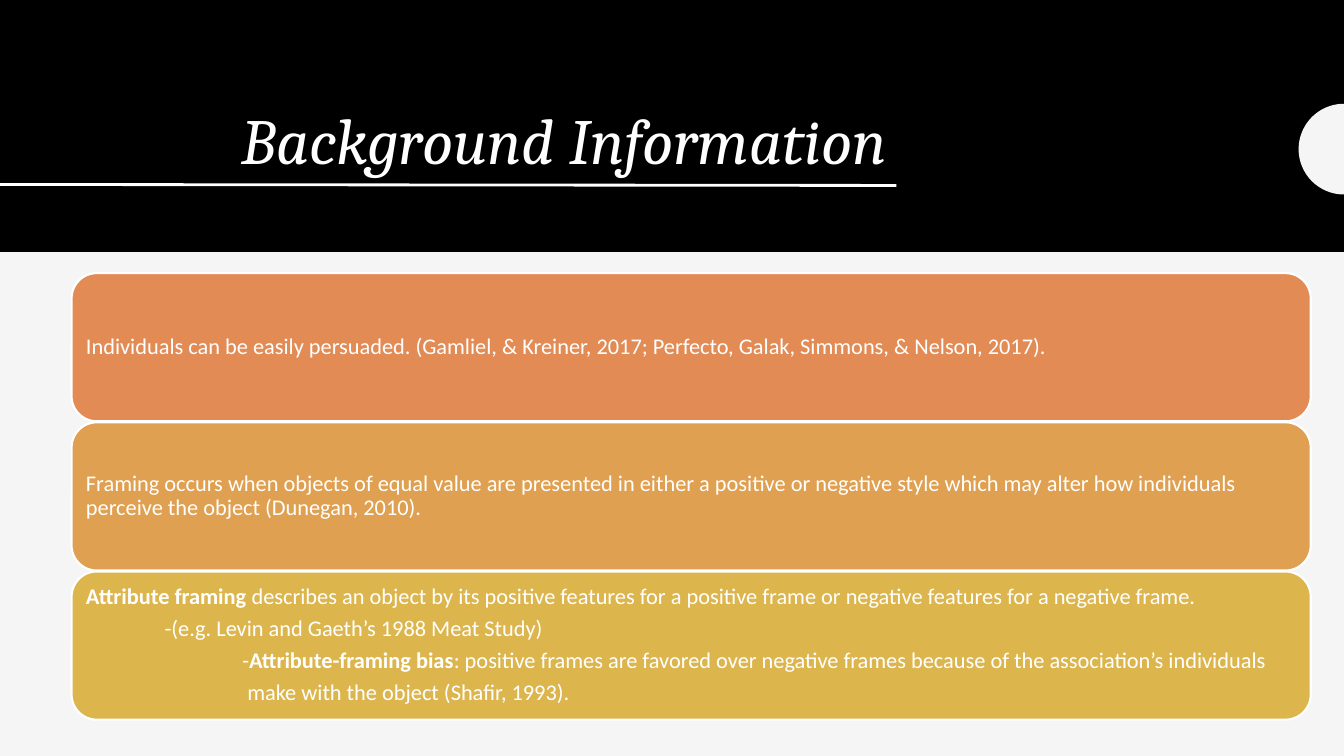
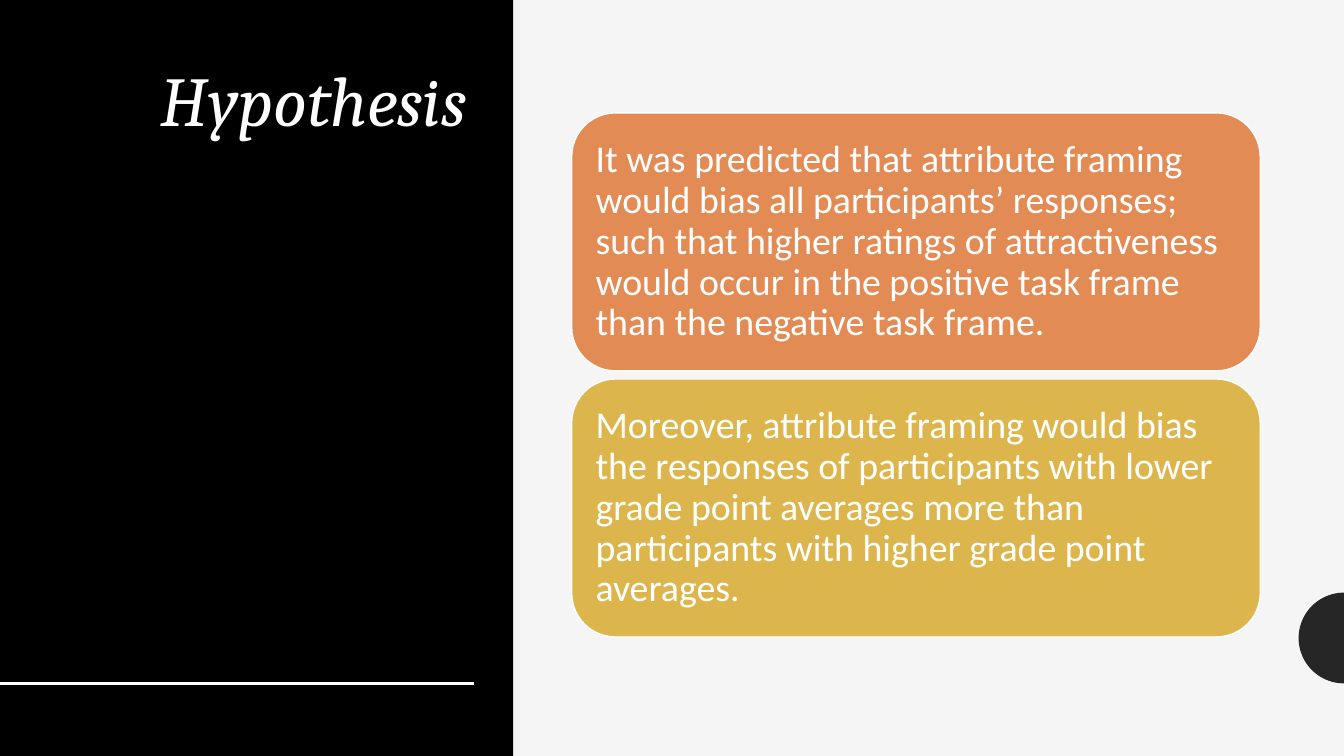
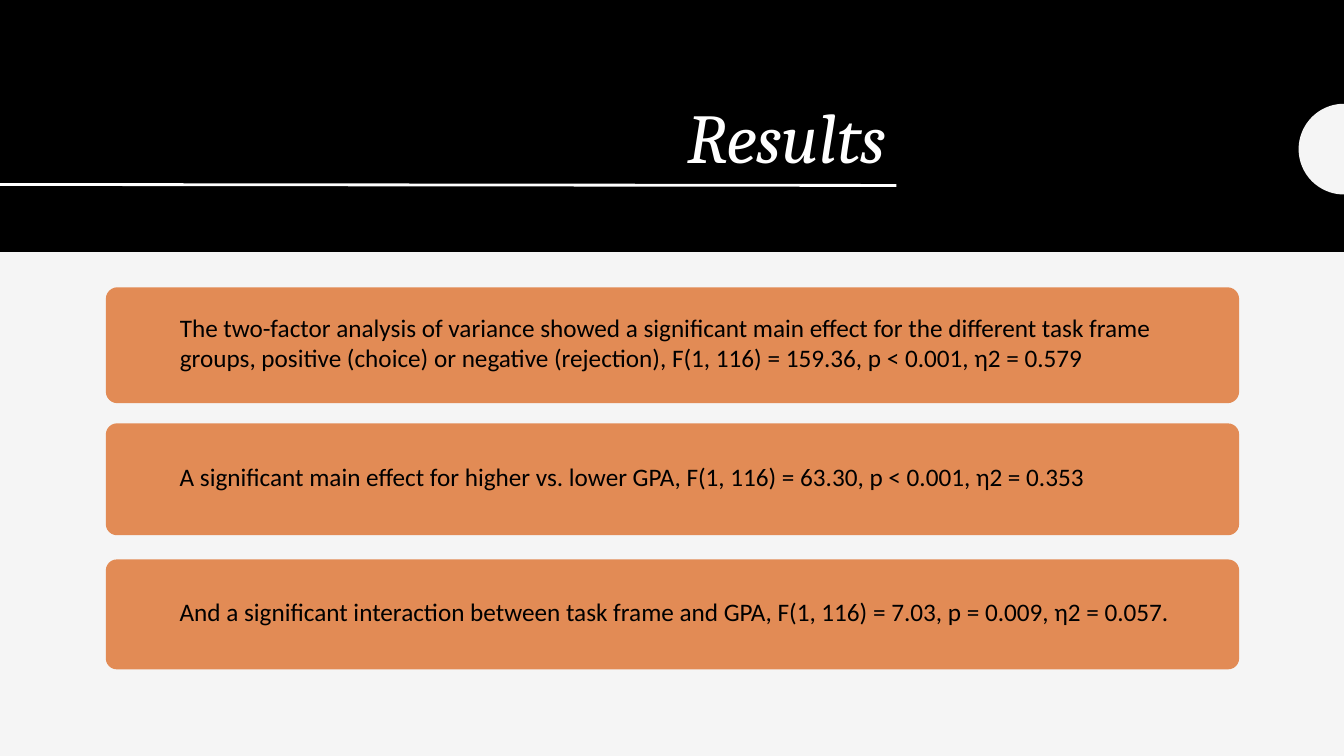
"""Build three slides on attribute framing: background, hypothesis and results."""
from dataclasses import dataclass
from math import cos, pi, sin

from lxml.etree import SubElement
from pptx import Presentation
from pptx.dml.color import RGBColor
from pptx.enum.shapes import MSO_CONNECTOR, MSO_SHAPE
from pptx.enum.text import MSO_ANCHOR, PP_ALIGN
from pptx.oxml.ns import qn
from pptx.util import Inches, Pt


@dataclass
class Theme:
    paper: str = "F5F5F5"
    black: str = "000000"
    white: str = "FFFFFF"
    dark: str = "262626"
    orange: str = "E28B55"
    amber: str = "DFA051"
    gold: str = "DCB64D"
    head: str = "Cambria"
    body: str = "Calibri"
    title: int = 50
    long: int = 46
    small: int = 16
    note: int = 18
    large: int = 27
    rule: int = 2


look = Theme()
wide, high = 13.33, 7.5
deck = Presentation()
deck.slide_width, deck.slide_height = Inches(wide), Inches(high)


def paint(shape, fill, edge=None, weight=1):
    """Give a shape a flat fill and an optional outline."""
    shape.shadow.inherit = False
    shape.fill.solid()
    shape.fill.fore_color.rgb = RGBColor.from_string(fill)
    if edge:
        shape.line.color.rgb = RGBColor.from_string(edge)
        shape.line.width = Pt(weight)
    else:
        shape.line.fill.background()


def write(frame, paras, font, size, color, anchor, pads, lead=0.9, after=0.0,
          align=PP_ALIGN.LEFT, slant=False):
    """Fill a frame with (indent, runs) paragraphs; a run is (text, bold)."""
    frame.word_wrap = True
    frame.vertical_anchor = anchor
    (frame.margin_left, frame.margin_top,
     frame.margin_right, frame.margin_bottom) = [Inches(pad) for pad in pads]
    for i, (indent, runs) in enumerate(paras):
        para = frame.add_paragraph() if i else frame.paragraphs[0]
        para.alignment, para.line_spacing = align, lead
        para.space_after = Pt(size * after)
        para._p.get_or_add_pPr().set("marL", str(Inches(indent)))
        for text, bold in runs:
            run = para.add_run()
            run.text = text
            run.font.name, run.font.size = font, Pt(size)
            run.font.bold, run.font.italic = bold, slant
            run.font.color.rgb = RGBColor.from_string(color)


top = dict(band=(wide, 2.5), box=(1.05, 0.47, 7.84, 1.35), anchor=MSO_ANCHOR.BOTTOM,
           rule=(1.83, 8.89, 1.84), dot=1.03, tint=look.paper)
side = dict(band=(5.09, high), box=(0.83, 0.61, 3.9, 5.42), anchor=MSO_ANCHOR.TOP,
            rule=(6.78, 4.7, 6.78), dot=5.88, tint=look.dark)

facts = dict(size=look.small, ink=look.white, edge=look.white, weight=1.5,
             pads=(0.07,) * 4, lead=0.9, after=0.35, round=0.17)
claims = dict(facts, size=look.large, weight=1, pads=(0.11,) * 4)
tests = dict(size=look.note, ink=look.black, edge=None, weight=0,
             pads=(0.7, 0.05, 0.5, 0.1), lead=1.0, after=0, round=0.1)

slides = [
    ("Background Information", look.long, top, facts, (0.71, 12.29), [
        (2.71, 1.47, look.orange, [
            (0, [("Individuals can be easily persuaded. (Gamliel, & Kreiner, 2017; "
                  "Perfecto, Galak, Simmons, & Nelson, 2017).", False)])]),
        (4.19, 1.47, look.amber, [
            (0, [("Framing occurs when objects of equal value are presented in either "
                  "a positive or negative style which may alter how individuals "
                  "perceive the object (Dunegan, 2010).", False)])]),
        (5.67, 1.47, look.gold, [
            (0, [("Attribute framing ", True),
                 ("describes an object by its positive features for a positive frame "
                  "or negative features for a negative frame.", False)]),
            (0.78, [("-(e.g. Levin and Gaeth’s 1988 Meat Study)", False)]),
            (1.55, [("-", False), ("Attribute-framing bias", True),
                    (": positive frames are favored over negative frames because of "
                     "the association’s individuals", False)]),
            (1.6, [("make with the object (Shafir, 1993).", False)])]),
    ]),
    ("Hypothesis", look.title, side, claims, (5.67, 6.83), [
        (1.12, 2.56, look.orange, [
            (0, [("It was predicted that attribute framing would bias all "
                  "participants’ responses; such that higher ratings of "
                  "attractiveness would occur in the positive task frame than the "
                  "negative task frame.", False)])]),
        (3.76, 2.56, look.gold, [
            (0, [("Moreover, attribute framing would bias the responses of "
                  "participants with lower grade point averages more than "
                  "participants with higher grade point averages.", False)])]),
    ]),
    ("Results", look.title, top, tests, (1.05, 11.24), [
        (2.85, 1.15, look.orange, [
            (0, [("The two-factor analysis of variance showed a significant main "
                  "effect for the different task frame groups, positive (choice) or "
                  "negative (rejection), F(1, 116) = 159.36, p < 0.001, η2 = 0.579",
                  False)])]),
        (4.2, 1.11, look.orange, [
            (0, [("A significant main effect for higher vs. lower GPA, "
                  "F(1, 116) = 63.30, p < 0.001, η2 = 0.353", False)])]),
        (5.55, 1.09, look.orange, [
            (0, [("And a significant interaction between task frame and GPA, "
                  "F(1, 116) = 7.03, p = 0.009, η2 = 0.057.", False)])]),
    ]),
]

for title, size, frame, style, (left, width), cards in slides:
    slide = deck.slides.add_slide(deck.slide_layouts[6])
    slide.background.fill.solid()
    slide.background.fill.fore_color.rgb = RGBColor.from_string(look.paper)
    shapes = slide.shapes

    band = shapes.add_shape(MSO_SHAPE.RECTANGLE, 0, 0, *map(Inches, frame["band"]))
    paint(band, look.black)

    box = shapes.add_textbox(*map(Inches, frame["box"]))
    write(box.text_frame, [(0, [(title, False)])], look.head, size, look.white,
          frame["anchor"], (0.1, 0.05, 0.1, 0.05), align=PP_ALIGN.RIGHT, slant=True)

    start, end, stop = map(Inches, frame["rule"])
    rule = shapes.add_connector(MSO_CONNECTOR.STRAIGHT, 0, start, end, stop)
    rule.line.color.rgb = RGBColor.from_string(look.white)
    rule.line.width = Pt(look.rule)
    SubElement(rule._element.spPr, qn("a:effectLst"))

    radius = 0.45
    turns = [pi / 2 + pi * i / 48 for i in range(49)]
    arc = [(Inches(wide + radius * cos(turn)),
            Inches(frame["dot"] + radius - radius * sin(turn))) for turn in turns]
    path = shapes.build_freeform(*arc[0])
    path.add_line_segments(arc[1:], close=True)
    paint(path.convert_to_shape(), frame["tint"])

    for y, tall, fill, paras in cards:
        card = shapes.add_shape(MSO_SHAPE.ROUNDED_RECTANGLE,
                                *map(Inches, (left, y, width, tall)))
        card.adjustments[0] = style["round"]
        paint(card, fill, style["edge"], style["weight"])
        write(card.text_frame, paras, look.body, style["size"], style["ink"],
              MSO_ANCHOR.MIDDLE, style["pads"], style["lead"], style["after"])

deck.save("out.pptx")
